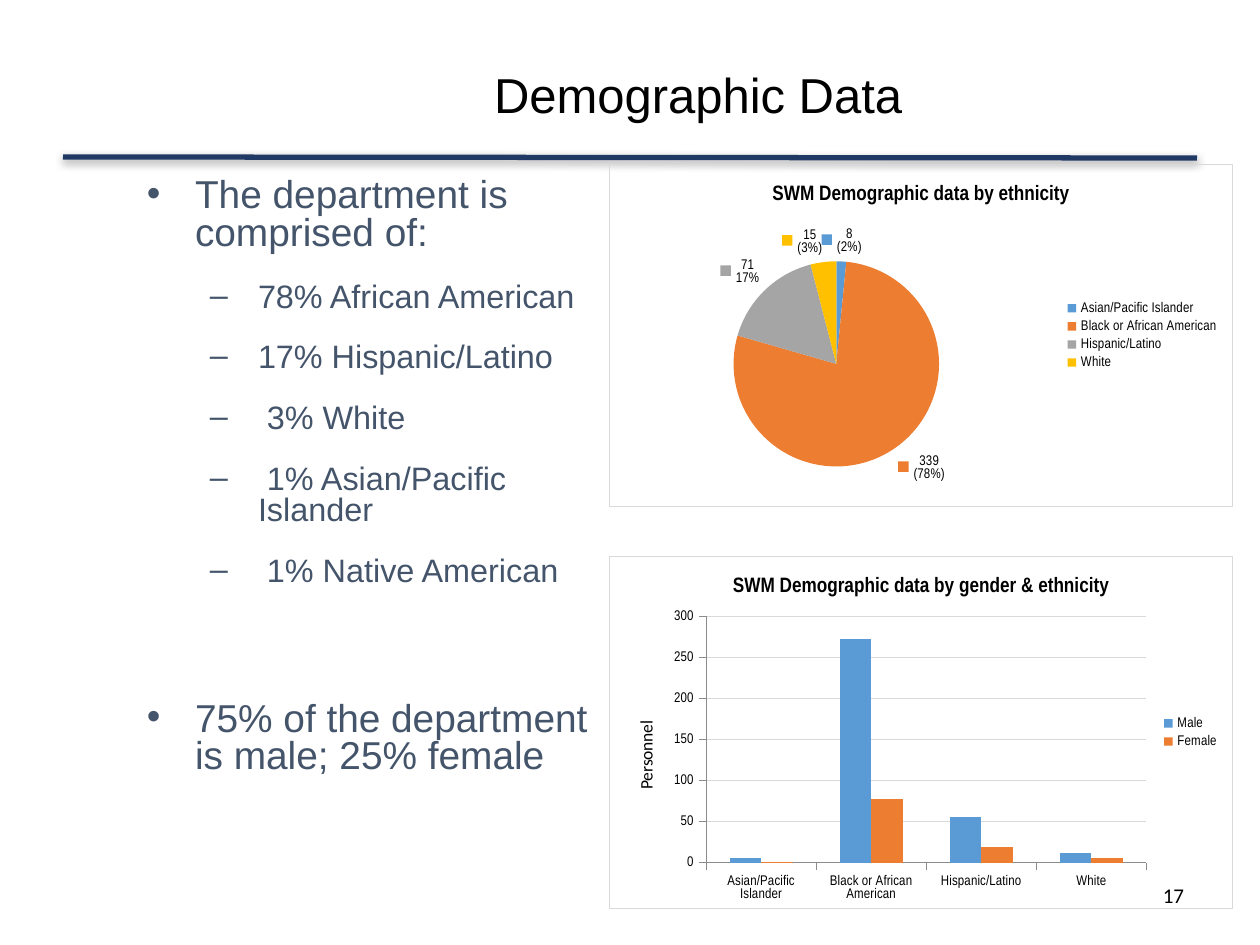
from copy import deepcopy

from lxml.etree import SubElement
from pptx import Presentation
from pptx.chart.data import CategoryChartData
from pptx.dml.color import RGBColor
from pptx.enum.chart import XL_CHART_TYPE as ChartType
from pptx.enum.chart import XL_LABEL_POSITION as LabelPosition
from pptx.enum.chart import XL_LEGEND_POSITION as LegendPosition
from pptx.enum.chart import XL_TICK_MARK as TickMark
from pptx.enum.shapes import MSO_CONNECTOR as Connector
from pptx.enum.text import MSO_ANCHOR as Anchor
from pptx.enum.text import PP_ALIGN as Align
from pptx.oxml import parse_xml
from pptx.oxml.ns import nsdecls, qn
from pptx.util import Pt

EMU_PER_PX = 914400 / 126
BLACK = RGBColor(0x00, 0x00, 0x00)
NAVY = RGBColor(0x20, 0x38, 0x64)
SLATE = RGBColor(0x44, 0x54, 0x6A)
LIGHT_GRAY = RGBColor(0xD9, 0xD9, 0xD9)
AXIS_GRAY = RGBColor(0x8C, 0x8C, 0x8C)
BLUE = RGBColor(0x5B, 0x9B, 0xD5)
ORANGE = RGBColor(0xED, 0x7D, 0x31)
GRAY = RGBColor(0xA5, 0xA5, 0xA5)
GOLD = RGBColor(0xFF, 0xC0, 0x00)

GROUPS = ["Asian/Pacific Islander", "Black or African American", "Hispanic/Latino", "White"]
ETHNICITY = {"Series 1": [7, 349, 74, 18]}
ETHNICITY_LABELS = ["8\n(2%)", "339\n(78%)", "71\n17%", "15\n(3%)"]
GENDER = {"Male": [6, 272, 55, 12], "Female": [1, 77, 19, 6]}
# (level, text, space before in points)
POINTS = [
    (0, "The department is comprised of:", 0),
    (1, "78% African American", 5),
    (1, "17% Hispanic/Latino", 5),
    (1, " 3% White", 5),
    (1, " 1% Asian/Pacific Islander", 5),
    (1, " 1% Native American", 5),
    (0, "75% of the department is male; 25% female", 53),
]


def px(length):
    return round(length * EMU_PER_PX)


def set_font(font, size, name, color=BLACK, bold=False):
    font.size, font.name, font.bold = Pt(size), name, bold
    font.color.rgb = color


class SlideBuilder:
    narrow = "Arial Narrow"
    bullets = [("•", 22.2, 48), ("–", 18.5, 111)]  # mark, text size, left indent in px
    hanging = 48

    def __init__(self, slide):
        self.slide = slide

    def frame(self, shape, box, anchor):
        shape.left, shape.top, shape.width, shape.height = map(px, box)
        frame = shape.text_frame
        frame.word_wrap = True
        frame.vertical_anchor = anchor
        frame.margin_left = frame.margin_right = frame.margin_top = frame.margin_bottom = 0
        return frame

    def text(self, shape, text, box, size, font, align, spacing=1.0):
        frame = self.frame(shape, box, Anchor.MIDDLE)
        frame.text = text
        paragraph = frame.paragraphs[0]
        paragraph.alignment, paragraph.line_spacing = align, spacing
        set_font(paragraph.runs[0].font, size, font)

    def title(self, text, box):
        self.text(self.slide.shapes.title, text, box, 28, "Arial", Align.CENTER, 0.9)

    def page_number(self, number, box):
        shape = self.slide.shapes.add_textbox(0, 0, 0, 0)
        self.text(shape, number, box, 12, "Calibri", Align.RIGHT)

    def rule(self, x1, y1, x2, y2):
        line = self.slide.shapes.add_connector(Connector.STRAIGHT, *map(px, (x1, y1, x2, y2)))
        line.line.color.rgb, line.line.width = NAVY, Pt(3)
        line._element.spPr.append(parse_xml(
            f'<a:effectLst {nsdecls("a")}><a:outerShdw blurRad="63500" dist="20000" '
            'dir="5400000" rotWithShape="0"><a:srgbClr val="000000"><a:alpha val="38000"/>'
            '</a:srgbClr></a:outerShdw></a:effectLst>'))

    def bullet_list(self, points, box):
        frame = self.frame(self.slide.shapes.add_textbox(0, 0, 0, 0), box, Anchor.TOP)
        for index, (level, text, before) in enumerate(points):
            paragraph = frame.add_paragraph() if index else frame.paragraphs[0]
            mark, size, indent = self.bullets[level]
            paragraph.text, paragraph.level = text, level
            paragraph.line_spacing = 0.8
            paragraph.space_before, paragraph.space_after = Pt(before), Pt(12)
            properties = paragraph._p.get_or_add_pPr()
            properties.set("marL", str(px(indent)))
            properties.set("indent", str(px(-self.hanging)))
            SubElement(properties, qn("a:buFont"), typeface="Arial")
            SubElement(properties, qn("a:buChar"), char=mark)
            set_font(paragraph.runs[0].font, size, "Arial", SLATE)

    def chart(self, kind, title, series, box, plot_box):
        data = CategoryChartData()
        data.categories = GROUPS
        for name, values in series.items():
            data.add_series(name, values)
        chart = self.slide.shapes.add_chart(kind, *map(px, box), data).chart
        set_font(chart.font, 10, "Calibri")
        chart.has_title = True
        chart.chart_title.text_frame.text = title
        chart.chart_title.include_in_layout = False
        set_font(chart.chart_title.text_frame.paragraphs[0].runs[0].font, 12, self.narrow, bold=True)
        chart.has_legend = True
        chart.legend.position = LegendPosition.RIGHT
        chart.legend.include_in_layout = False
        set_font(chart.legend.font, 8, self.narrow)
        self.border(chart)
        self.place_plot(chart, box, plot_box)
        return chart

    def border(self, chart):
        chart._chartSpace.find(qn("c:chart")).addnext(parse_xml(
            f'<c:spPr {nsdecls("c", "a")}><a:noFill/><a:ln w="9525"><a:solidFill>'
            f'<a:srgbClr val="{LIGHT_GRAY}"/></a:solidFill></a:ln></c:spPr>'))

    def place_plot(self, chart, box, plot_box):
        """Fix the inner plot area, given in slide px, as fractions of the chart."""
        left, top, width, height = box
        x, y, w, h = plot_box
        fractions = {"x": (x - left) / width, "y": (y - top) / height,
                     "w": w / width, "h": h / height}
        plot_area = chart._chartSpace.find(qn("c:chart")).find(qn("c:plotArea"))
        for old in plot_area.findall(qn("c:layout")):
            plot_area.remove(old)
        values = "".join(f'<c:{key} val="{value:.3f}"/>' for key, value in fractions.items())
        plot_area.insert(0, parse_xml(
            f'<c:layout {nsdecls("c")}><c:manualLayout><c:layoutTarget val="inner"/>'
            f'<c:xMode val="edge"/><c:yMode val="edge"/>{values}</c:manualLayout></c:layout>'))

    def pie(self, title, series, labels, colors, box, plot_box):
        chart = self.chart(ChartType.PIE, title, series, box, plot_box)
        slices = chart.plots[0].series[0]
        shared = slices.data_labels
        shared.show_value = shared.show_percentage = shared.show_legend_key = True
        shared.position = LabelPosition.OUTSIDE_END
        set_font(shared.font, 8, self.narrow)
        for index, (text, color) in enumerate(zip(labels, colors)):
            point = slices.points[index]
            point.format.fill.solid()
            point.format.fill.fore_color.rgb = color
            label = point.data_label
            label.text_frame.text = text
            for paragraph in label.text_frame.paragraphs:
                set_font(paragraph.runs[0].font, 8, self.narrow)
            label.position = LabelPosition.OUTSIDE_END
        self.match_point_labels(shared._element)

    def match_point_labels(self, shared):
        """Give each point label the legend key, percentage and font of the series labels."""
        for label in shared.findall(qn("c:dLbl")):
            label.find(qn("c:dLblPos")).addprevious(deepcopy(shared.find(qn("c:txPr"))))
            for flag in ("c:showLegendKey", "c:showPercent"):
                label.find(qn(flag)).set("val", "1")

    def columns(self, title, axis_title, series, colors, box, plot_box):
        chart = self.chart(ChartType.COLUMN_CLUSTERED, title, series, box, plot_box)
        plot = chart.plots[0]
        plot.gap_width, plot.overlap, plot.vary_by_categories = 150, 0, False
        for bars, color in zip(plot.series, colors):
            bars.format.fill.solid()
            bars.format.fill.fore_color.rgb = color
        for axis in (chart.category_axis, chart.value_axis):
            axis.major_tick_mark = TickMark.OUTSIDE
            axis.format.line.color.rgb = AXIS_GRAY
            set_font(axis.tick_labels.font, 8, self.narrow)
        values = chart.value_axis
        values.minimum_scale, values.maximum_scale, values.major_unit = 0, 300, 50
        values.major_gridlines.format.line.color.rgb = LIGHT_GRAY
        values.major_gridlines.format.line.width = Pt(0.75)
        values.axis_title.text_frame.text = axis_title
        set_font(values.axis_title.text_frame.paragraphs[0].runs[0].font, 10, "Calibri")


def main():
    deck = Presentation()
    deck.slide_width, deck.slide_height = px(1260), px(945)
    builder = SlideBuilder(deck.slides.add_slide(deck.slide_layouts[5]))
    builder.rule(63, 157, 1197, 158)
    builder.title("Demographic Data", (136, 38, 1124, 119))
    builder.page_number("17", (903, 875, 281, 40))
    builder.columns("SWM Demographic data by gender & ethnicity", "Personnel", GENDER,
                    [BLUE, ORANGE], (609, 556, 624, 353), (706, 616, 441, 247))
    builder.pie("SWM Demographic data by ethnicity", ETHNICITY, ETHNICITY_LABELS,
                [BLUE, ORANGE, GRAY, GOLD], (609, 164, 624, 343), (733, 261, 206, 206))
    builder.bullet_list(POINTS, (147, 179, 473, 643))
    deck.save("out.pptx")


if __name__ == "__main__":
    main()
